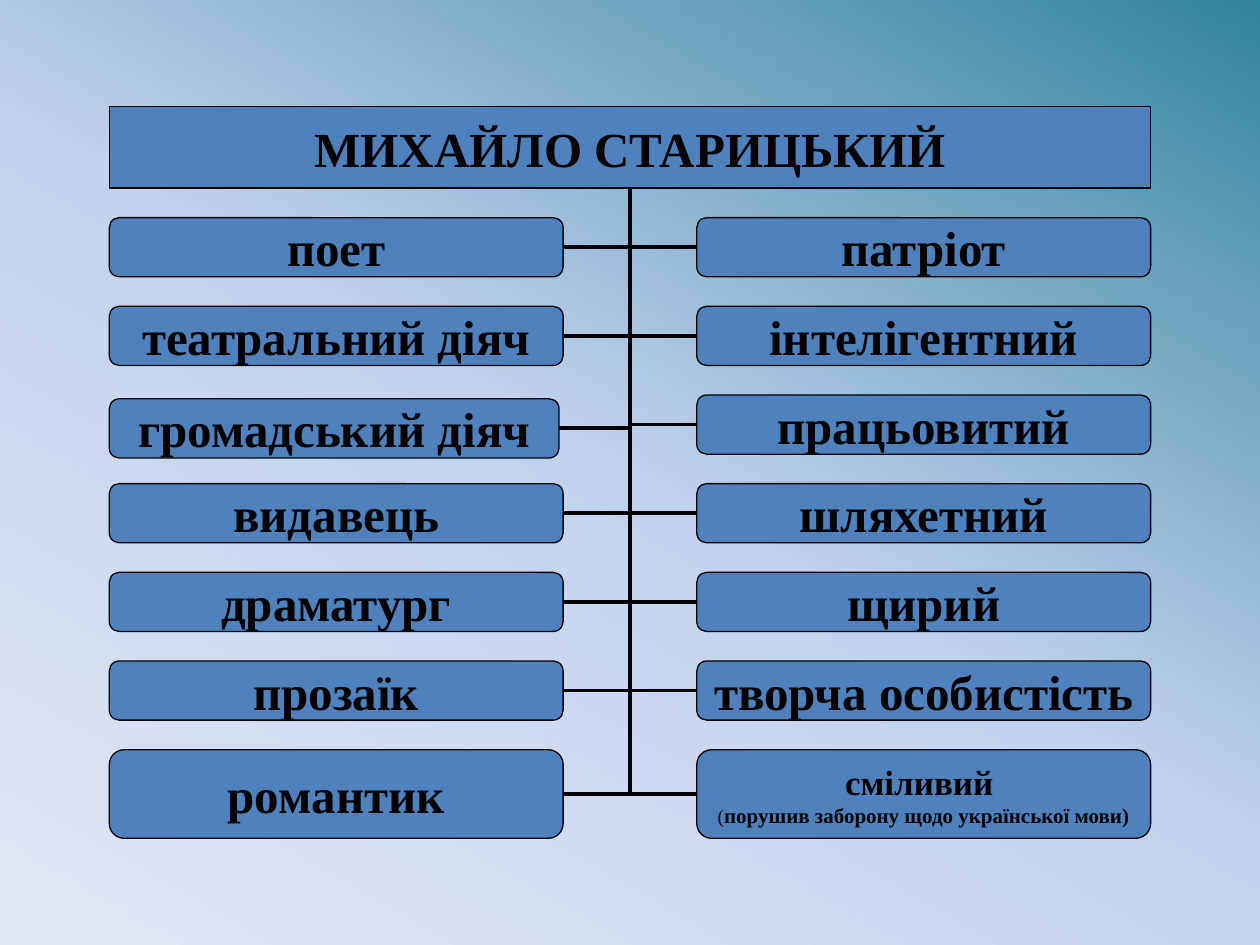
import copy
from dataclasses import dataclass

import pptx
import pptx.dml.color
import pptx.enum.shapes
import pptx.enum.text
import pptx.oxml
import pptx.oxml.ns
import pptx.util
from pptx.util import Pt


@dataclass(frozen=True)
class Theme:
    font: str = "Times New Roman"
    box: str = "4F81BD"
    ink: str = "000000"
    background: tuple = ((0, "31859C"), (0.5, "C2D1ED"), (1, "E1E8F5"))
    large: float = 28
    medium: float = 20
    small: float = 12
    bracket: float = 11
    outline: float = 0.75
    branch: float = 2.25


theme = Theme()
rgb = pptx.dml.color.RGBColor.from_string
qn = pptx.oxml.ns.qn


def style_box(box, lines):
    """Colour a box and fill it with (text, size) lines."""
    box.fill.solid()
    box.fill.fore_color.rgb = rgb(theme.box)
    box.line.color.rgb = rgb(theme.ink)
    box.line.width = Pt(theme.outline)
    frame = box.text_frame
    frame.margin_left = frame.margin_right = frame.margin_top = frame.margin_bottom = 0
    frame.word_wrap = False
    frame.auto_size = pptx.enum.text.MSO_AUTO_SIZE.NONE
    frame.vertical_anchor = pptx.enum.text.MSO_ANCHOR.MIDDLE
    frame.text = "\n".join(text for text, size in lines)
    for paragraph, (text, size) in zip(frame.paragraphs, lines):
        paragraph.alignment = pptx.enum.text.PP_ALIGN.CENTER
        paragraph.font.name = theme.font
        paragraph.font.size = Pt(size)
        paragraph.font.bold = True
        paragraph.font.color.rgb = rgb(theme.ink)


prs = pptx.Presentation()
prs.slide_width, prs.slide_height = Pt(720), Pt(540)
slide = prs.slides.add_slide(prs.slide_layouts[5])

# Background
backdrop = slide.background.fill
backdrop.gradient()
backdrop.gradient_angle = 240
stop_list = slide.element.find(".//" + qn("a:gsLst"))
stop_list.append(copy.deepcopy(stop_list[-1]))
for stop, (position, color) in zip(backdrop.gradient_stops, theme.background):
    stop.position = position
    stop.color.rgb = rgb(color)

# Name of the writer
left_edge, full_width = 62.5, 595
writer = slide.shapes.title
writer.left, writer.top = Pt(left_edge), Pt(61)
writer.width, writer.height = Pt(full_width), Pt(46.5)
geometry = pptx.oxml.parse_xml(
    f'<a:prstGeom {pptx.oxml.ns.nsdecls("a")} prst="roundRect"><a:avLst/></a:prstGeom>'
)
writer.element.spPr.append(geometry)
style_box(writer, [("МИХАЙЛО СТАРИЦЬКИЙ", theme.large)])
trunk_x, trunk_y = writer.left + writer.width // 2, writer.top + writer.height

# Occupations on the left, qualities on the right
rows = [
    ("поет", "патріот"),
    ("театральний діяч", "інтелігентний"),
    ("громадський діяч", "працьовитий"),
    ("видавець", "шляхетний"),
    ("драматург", "щирий"),
    ("прозаїк", "творча особистість"),
    ("романтик", "сміливий "),
]
first_top, pitch, box_width, box_height, last_height = 124.4, 50.67, 259.3, 33.8, 50.6
right_edge = left_edge + full_width
LEFT_SITE, BOTTOM_SITE, RIGHT_SITE = 1, 2, 3

for row, (occupation, quality) in enumerate(rows):
    height = last_height if row == len(rows) - 1 else box_height
    for text, on_left in ((occupation, True), (quality, False)):
        x = left_edge if on_left else right_edge - box_width
        y, width = first_top + row * pitch, box_width
        if text == "громадський діяч":  # sits lower and is narrower than the rest
            y, width = y + 2.2, width - 2.3
        trait = slide.shapes.add_shape(
            pptx.enum.shapes.MSO_SHAPE.ROUNDED_RECTANGLE, Pt(x), Pt(y), Pt(width), Pt(height)
        )
        trait.shadow.inherit = False
        if text == "сміливий ":
            style_box(trait, [(text, theme.medium), ("", theme.small)])
            note = trait.text_frame.paragraphs[1]
            bracket = note.add_run()
            bracket.text = "("
            bracket.font.size = Pt(theme.bracket)
            bracket.font.bold = False
            note.add_run().text = "порушив заборону щодо української мови)"
        else:
            style_box(trait, [(text, theme.large)])

        inner_x = trait.left + trait.width if on_left else trait.left
        branch = slide.shapes.add_connector(
            pptx.enum.shapes.MSO_CONNECTOR.ELBOW,
            inner_x, trait.top + trait.height // 2, trunk_x, trunk_y,
        )
        branch.begin_connect(trait, RIGHT_SITE if on_left else LEFT_SITE)
        branch.end_connect(writer, BOTTOM_SITE)
        branch.line.color.rgb = rgb(theme.ink)
        branch.line.width = Pt(theme.branch)
        properties = branch.element.spPr
        properties.find(qn("a:prstGeom")).set("prst", "bentConnector2")
        properties.append(pptx.oxml.parse_xml(f'<a:effectLst {pptx.oxml.ns.nsdecls("a")}/>'))
        slide.shapes.element.insert(2, branch.element)  # behind the boxes

prs.save("out.pptx")
